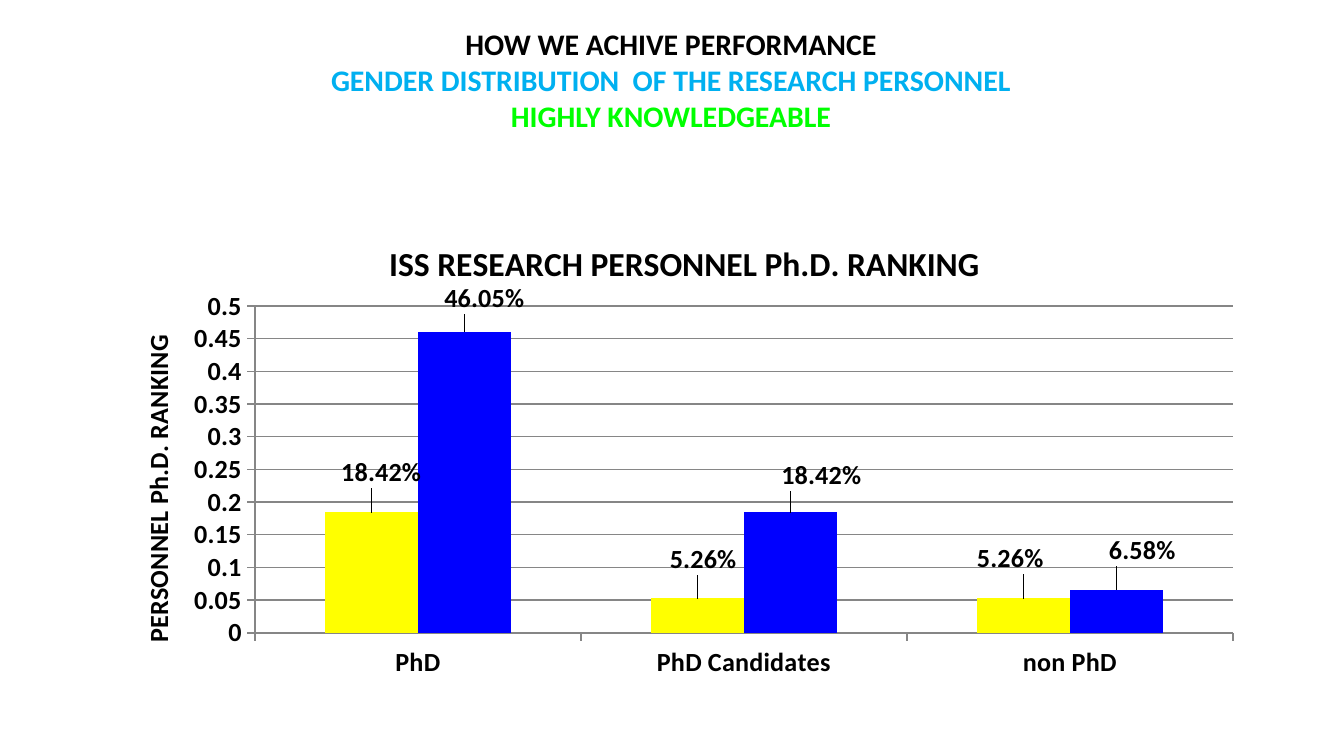
"""Build the slide on the gender distribution of research personnel."""
import pptx
import pptx.chart.data
import pptx.dml.color
import pptx.enum.chart
import pptx.enum.text
import pptx.oxml
import pptx.oxml.ns
import pptx.util

RGB = pptx.dml.color.RGBColor
BLACK = RGB(0, 0, 0)
SKY = RGB(0, 176, 240)
GREEN = RGB(0, 255, 0)
YELLOW = RGB(255, 255, 0)
BLUE = RGB(0, 0, 255)
GREY = RGB(134, 134, 134)
SCALE = 914400 / 134.4
WIDE, HIGH = 1157, 478


def write(para, text, size=14, color=BLACK):
    para.alignment = pptx.enum.text.PP_ALIGN.CENTER
    run = para.add_run()
    run.text = text
    run.font.name = "Calibri"
    run.font.size = pptx.util.Pt(size)
    run.font.bold = True
    run.font.color.rgb = color


def place(parent, index, **spots):
    for old in parent.xpath("c:layout"):
        parent.remove(old)
    tags = "".join(f'<c:{tag} val="{spot}"/>' for tag, spot in spots.items())
    parent.insert(index, pptx.oxml.parse_xml(
        f'<c:layout {pptx.oxml.ns.nsdecls("c")}><c:manualLayout>{tags}'
        "</c:manualLayout></c:layout>"))


deck = pptx.Presentation()
deck.slide_width = round(1344 * SCALE)
deck.slide_height = round(756 * SCALE)
slide = deck.slides.add_slide(deck.slide_layouts[6])

box = slide.shapes.add_textbox(*[round(n * SCALE) for n in (122, 19, 1098, 122)])
frame = box.text_frame
frame.word_wrap = True
heads = [
    ("HOW WE ACHIVE PERFORMANCE", BLACK),
    ("GENDER DISTRIBUTION  OF THE RESEARCH PERSONNEL", SKY),
    ("HIGHLY KNOWLEDGEABLE", GREEN),
]
for row, (text, color) in enumerate(heads):
    para = frame.add_paragraph() if row else frame.paragraphs[0]
    write(para, text, size=16, color=color)

data = pptx.chart.data.CategoryChartData()
data.categories = ["PhD", "PhD Candidates", "non PhD"]
data.add_series("Series 1", [0.1842, 0.0526, 0.0526])
data.add_series("Series 2", [0.4605, 0.1842, 0.0658])
chart = slide.shapes.add_chart(
    pptx.enum.chart.XL_CHART_TYPE.COLUMN_CLUSTERED,
    *[round(n * SCALE) for n in (99, 210, WIDE, HIGH)], data).chart
chart.has_legend = False
chart.font.name = "Calibri"
chart.font.size = pptx.util.Pt(10)
chart.font.color.rgb = BLACK
place(chart._chartSpace.chart.plotArea, 0, layoutTarget="inner",
      xMode="edge", yMode="edge", x=156 / WIDE, y=96 / HIGH,
      w=978 / WIDE, h=327 / HIGH)

chart.has_title = True
title = chart.chart_title
write(title.text_frame.paragraphs[0], "ISS RESEARCH PERSONNEL Ph.D. RANKING", size=18)
place(title._element, 1, xMode="edge", yMode="edge", x=284 / WIDE, y=24 / HIGH)

level = chart.value_axis
level.minimum_scale, level.maximum_scale, level.major_unit = 0, 0.5, 0.05
level.has_major_gridlines = True
level.major_gridlines.format.line.color.rgb = GREY
level.tick_labels.number_format = "General"
level.tick_labels.number_format_is_linked = False
level.has_title = True
name = level.axis_title
write(name.text_frame.paragraphs[0], "PERSONNEL Ph.D. RANKING")
name.text_frame._txBody.bodyPr.set("rot", "-5400000")
place(name._element, 1, xMode="edge", yMode="edge", x=36 / WIDE, y=120 / HIGH)

for axis in (level, chart.category_axis):
    axis.major_tick_mark = pptx.enum.chart.XL_TICK_MARK.OUTSIDE
    axis.format.line.color.rgb = GREY
    axis.tick_labels.font.size = pptx.util.Pt(14)
    axis.tick_labels.font.bold = True

plot = chart.plots[0]
plot.gap_width = 150
plot.overlap = 0
plot.vary_by_categories = False
shifts = [
    [(10, -19), (6, -18), (-13, -19)],
    [(20, -12), (31, -16), (26, -18)],
]
for bars, color, moves in zip(plot.series, (YELLOW, BLUE), shifts):
    bars.format.fill.solid()
    bars.format.fill.fore_color.rgb = color
    bars.invert_if_negative = False
    labels = bars.data_labels
    labels.show_value = True
    labels.number_format = "0.00%"
    labels.number_format_is_linked = False
    labels.font.size = pptx.util.Pt(14)
    labels.font.bold = True
    for spot, (right, down) in enumerate(moves):
        label = bars.points[spot].data_label
        label.font.size = pptx.util.Pt(14)
        label.font.bold = True
        label.position = pptx.enum.chart.XL_LABEL_POSITION.OUTSIDE_END
        node = bars._element.xpath(f"c:dLbls/c:dLbl[c:idx/@val='{spot}']")[0]
        place(node, 1, x=right / WIDE, y=down / HIGH)
        node.insert(2, pptx.oxml.parse_xml(
            f'<c:numFmt {pptx.oxml.ns.nsdecls("c")} formatCode="0.00%" sourceLinked="0"/>'))

deck.save("out.pptx")
